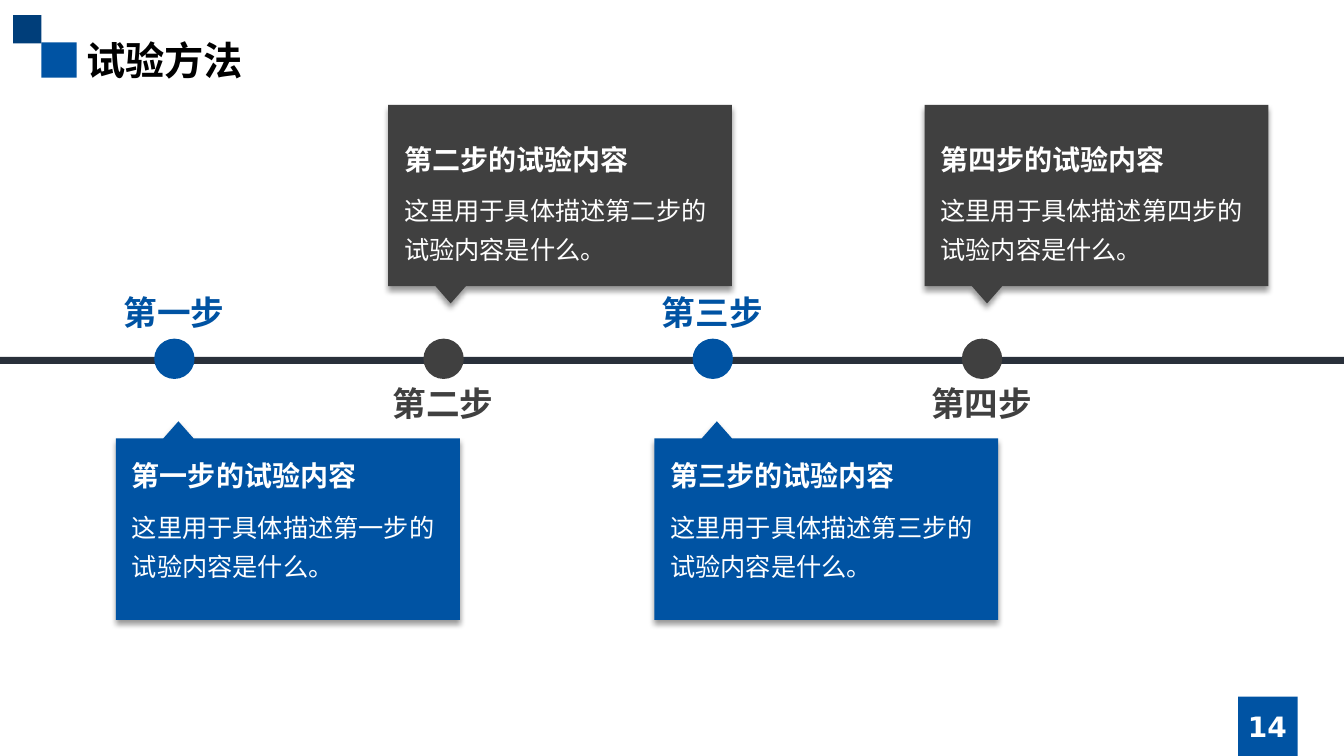
from lxml.etree import SubElement
from pptx import Presentation
from pptx.dml.color import RGBColor
from pptx.enum.shapes import MSO_SHAPE
from pptx.enum.text import MSO_ANCHOR, PP_ALIGN
from pptx.oxml.ns import qn
from pptx.util import Inches, Pt

COLORS = {
    "blue": "0053A3",
    "navy": "003E7A",
    "gray": "404040",
    "axis": "29303A",
    "black": "000000",
    "white": "FFFFFF",
}
CJK_FONT = "Noto Sans CJK SC"
STEP_PITCH = 2.67
CALLOUT_WIDTH, CALLOUT_HEIGHT, POINTER_HEIGHT = 3.41, 1.8, 0.17
STEPS = [("一", 1.15), ("二", 3.85), ("三", 6.49), ("四", 9.17)]


def rgb(color):
    return RGBColor.from_string(COLORS[color])


def paint(shape, color):
    shape.fill.solid()
    shape.fill.fore_color.rgb = rgb(color)
    shape.line.fill.background()
    shape.shadow.inherit = False


def add_block(slide, preset, left, top, width, height, color):
    block = slide.shapes.add_shape(
        preset, Inches(left), Inches(top), Inches(width), Inches(height))
    paint(block, color)


def add_text(shapes, text, left, top, width, height, size, color, bold=True,
             wrap=True, align=PP_ALIGN.LEFT, spacing=1.0, font=CJK_FONT,
             anchor=MSO_ANCHOR.TOP):
    box = shapes.add_textbox(
        Inches(left), Inches(top), Inches(width), Inches(height))
    frame = box.text_frame
    frame.word_wrap = wrap
    frame.vertical_anchor = anchor
    paragraph = frame.paragraphs[0]
    paragraph.alignment = align
    paragraph.line_spacing = spacing
    run = paragraph.add_run()
    run.text = text
    run.font.size = Pt(size)
    run.font.bold = bold
    run.font.color.rgb = rgb(color)
    run.font.name = font
    east_asian = SubElement(run.font._element, qn("a:ea"))
    east_asian.set("typeface", CJK_FONT)


def add_drop_shadow(shape):
    effects = shape._element.spPr.find(qn("a:effectLst"))
    shadow = SubElement(effects, qn("a:outerShdw"), blurRad=str(Pt(4)),
                        dist=str(Pt(3)), dir="5400000", algn="t",
                        rotWithShape="0")
    tint = SubElement(shadow, qn("a:srgbClr"), val=COLORS["black"])
    SubElement(tint, qn("a:alpha"), val="40000")


def add_callout(slide, ordinal, left, above, color):
    group = slide.shapes.add_group_shape()
    if above:
        tip, base, far, heading_top = 3.01, 3.01 - POINTER_HEIGHT, 1.04, 1.36
    else:
        tip, base, heading_top = 4.18, 4.18 + POINTER_HEIGHT, 4.5
        far = base + CALLOUT_HEIGHT
    right = left + CALLOUT_WIDTH
    outline = [(left + 0.77, base), (right, base), (right, far),
               (left, far), (left, base), (left + 0.47, base)]
    builder = group.shapes.build_freeform(Inches(left + 0.62), Inches(tip))
    builder.add_line_segments(
        [(Inches(x), Inches(y)) for x, y in outline], close=True)
    panel = builder.convert_to_shape()
    paint(panel, color)
    add_drop_shadow(panel)
    add_text(group.shapes, f"这里用于具体描述第{ordinal}步的试验内容是什么。",
             left + 0.06, heading_top + 0.44, 3.29, 0.89, 18, "white",
             bold=False, spacing=1.3)
    add_text(group.shapes, f"第{ordinal}步的试验内容", left + 0.06, heading_top,
             2.45, 0.44, 20, "white", wrap=False)


def add_step(slide, index, ordinal, callout_left):
    above = index % 2 == 1
    color = "gray" if above else "blue"
    offset = index * STEP_PITCH
    add_block(slide, MSO_SHAPE.OVAL, 1.53 + offset, 3.36, 0.4, 0.4, color)
    add_callout(slide, ordinal, callout_left, above, color)
    add_text(slide.shapes, f"第{ordinal}步", 1.12 + offset,
             3.75 if above else 2.85, 1.21, 0.5, 24, color, wrap=False,
             align=PP_ALIGN.CENTER, font="Arial")


def add_frame(slide):
    add_block(slide, MSO_SHAPE.RECTANGLE, 0.41, 0.42, 0.35, 0.35, "blue")
    add_block(slide, MSO_SHAPE.RECTANGLE, 0.13, 0.15, 0.28, 0.28, "navy")
    add_block(slide, MSO_SHAPE.RECTANGLE, 12.28, 6.91, 0.59, 0.59, "blue")
    add_text(slide.shapes, "试验方法", 0.76, 0.31, 11.81, 0.57, 28, "black")
    add_text(slide.shapes, "14", 11.81, 7.01, 1.52, 0.4, 20, "white",
             align=PP_ALIGN.CENTER, font="DejaVu Sans",
             anchor=MSO_ANCHOR.MIDDLE)


def main():
    deck = Presentation()
    deck.slide_width = Inches(13.33)
    deck.slide_height = Inches(7.5)
    slide = deck.slides.add_slide(deck.slide_layouts[6])
    add_frame(slide)
    add_block(slide, MSO_SHAPE.RECTANGLE, 0, 3.54, 13.33, 0.07, "axis")
    for index, (ordinal, callout_left) in enumerate(STEPS):
        add_step(slide, index, ordinal, callout_left)
    deck.save("out.pptx")


if __name__ == "__main__":
    main()
